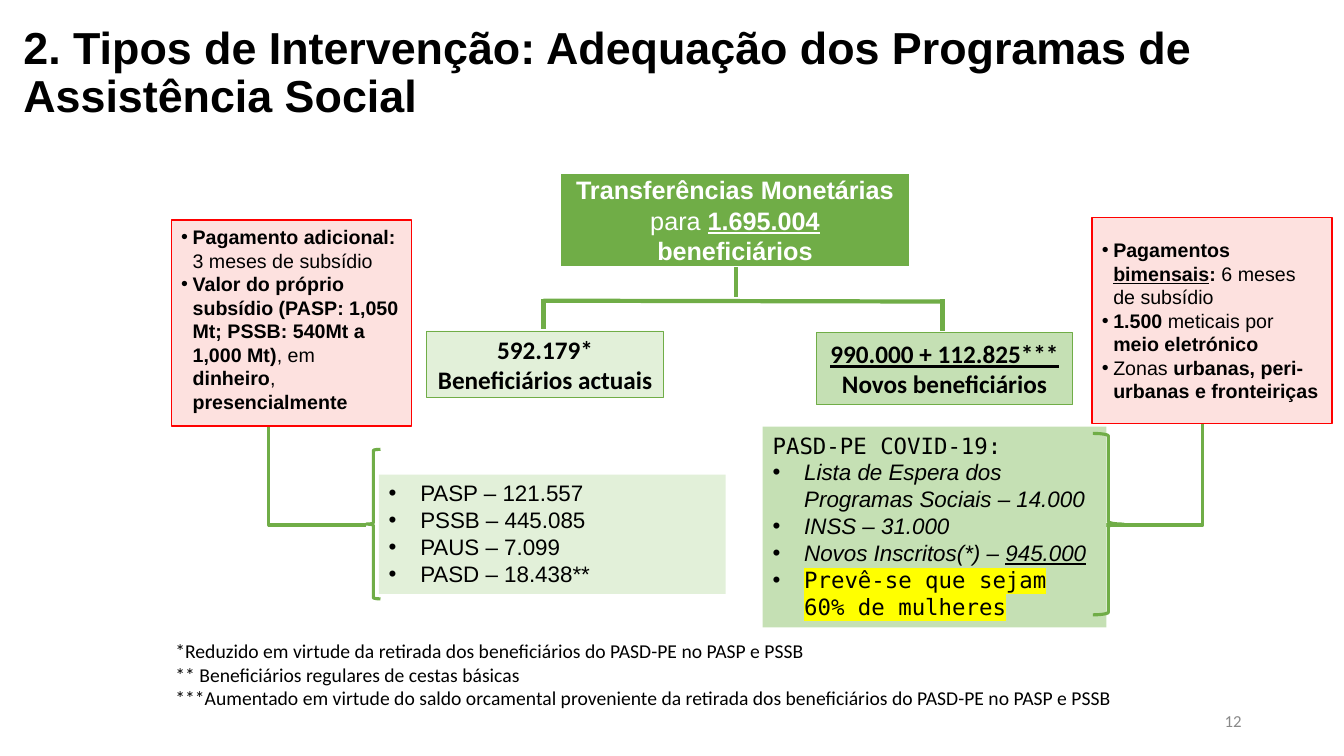
"""Build the slide on adapting the social assistance programmes, on a grid of 160 by 90 cells."""
from typing import NamedTuple, Optional

import lxml.etree
import pptx
import pptx.dml.color
import pptx.enum.shapes
import pptx.enum.text
import pptx.oxml.ns
import pptx.util

COLORS = {
    "green": "70AD47", "pale": "E2F0D9", "soft": "C5E0B4", "pink": "FDE1DF", "red": "FF0000",
    "white": "FFFFFF", "black": "000000", "gray": "898989", "yellow": "FFFF00",
}
SLIDE_WIDTH, SLIDE_HEIGHT = pptx.util.Inches(13.33), pptx.util.Inches(7.5)
COLUMN, ROW = SLIDE_WIDTH / 160, SLIDE_HEIGHT / 90
MONO = "DejaVu Sans Mono"
Shapes = pptx.enum.shapes.MSO_SHAPE
Links = pptx.enum.shapes.MSO_CONNECTOR
Anchor = pptx.enum.text.MSO_ANCHOR
Align = pptx.enum.text.PP_ALIGN


class Area(NamedTuple):
    column: float
    row: float
    columns: float
    rows: float

    def emu(self) -> list[int]:
        return [round(self.column * COLUMN), round(self.row * ROW),
                round(self.columns * COLUMN), round(self.rows * ROW)]


class Run(NamedTuple):
    text: str
    bold: bool = False
    italic: bool = False
    underline: bool = False
    font: Optional[str] = None
    highlight: Optional[str] = None


class Paragraph(NamedTuple):
    runs: list[Run]
    indent: float = 0


class Panel(NamedTuple):
    area: Area
    fill: str
    border: Optional[str]
    border_width: float
    paragraphs: list[Paragraph]
    style: dict


class Link(NamedTuple):
    start: tuple[float, float]
    end: tuple[float, float]
    kind: int = Links.STRAIGHT
    width: float = 3


class Brace(NamedTuple):
    area: Area
    mirrored: bool = False


def plain(*texts: str, indent: float = 0, **marks) -> list[Paragraph]:
    return [Paragraph([Run(text, **marks)], indent) for text in texts]


def rgb(name: str) -> pptx.dml.color.RGBColor:
    return pptx.dml.color.RGBColor.from_string(COLORS[name])


def child(parent, tag: str, **attributes: str):
    return lxml.etree.SubElement(parent, pptx.oxml.ns.qn(tag), attributes)


def write(frame, paragraphs: list[Paragraph], *, size: float, font: str = "Arial",
          color: str = "black", align=Align.LEFT, anchor=Anchor.TOP, spacing: float = 1) -> None:
    frame.word_wrap = True
    frame.vertical_anchor = anchor
    for index, content in enumerate(paragraphs):
        paragraph = frame.add_paragraph() if index else frame.paragraphs[0]
        if content.indent:
            properties = paragraph._p.get_or_add_pPr()
            margin = round(content.indent * COLUMN)
            properties.set("marL", str(margin))
            properties.set("indent", str(-margin))
            child(properties, "a:buFont", typeface="Arial")
            child(properties, "a:buChar", char="•")
        paragraph.alignment = align
        paragraph.line_spacing = spacing
        for part in content.runs:
            run = paragraph.add_run()
            run.text = part.text
            run.font.size = pptx.util.Pt(size)
            run.font.name = part.font or font
            run.font.bold = part.bold
            run.font.italic = part.italic
            run.font.underline = part.underline
            run.font.color.rgb = rgb(color)
            if part.highlight:
                properties = run._r.get_or_add_rPr()
                marker = child(properties, "a:highlight")
                child(marker, "a:srgbClr", val=COLORS[part.highlight])
                properties.find(pptx.oxml.ns.qn("a:solidFill")).addnext(marker)


def draw_text(slide, area: Area, paragraphs: list[Paragraph], **style) -> None:
    write(slide.shapes.add_textbox(*area.emu()).text_frame, paragraphs, **style)


def draw_panel(slide, panel: Panel) -> None:
    box = slide.shapes.add_shape(Shapes.RECTANGLE, *panel.area.emu())
    box.shadow.inherit = False
    box.fill.solid()
    box.fill.fore_color.rgb = rgb(panel.fill)
    if panel.border:
        box.line.color.rgb = rgb(panel.border)
        box.line.width = pptx.util.Pt(panel.border_width)
    else:
        box.line.fill.background()
    write(box.text_frame, panel.paragraphs, **panel.style)


def draw_link(slide, link: Link) -> None:
    (left, top), (right, bottom) = link.start, link.end
    connector = slide.shapes.add_connector(
        link.kind, round(left * COLUMN), round(top * ROW), round(right * COLUMN), round(bottom * ROW))
    connector.line.color.rgb = rgb("green")
    connector.line.width = pptx.util.Pt(link.width)
    properties = connector._element.spPr
    child(properties, "a:effectLst")
    if link.kind == Links.ELBOW:
        guides = properties.prstGeom.get_or_add_avLst()
        child(guides, "a:gd", name="adj1", fmla="val 100000")


def draw_brace(slide, brace: Brace) -> None:
    shape = slide.shapes.add_shape(Shapes.LEFT_BRACE, *brace.area.emu())
    shape.shadow.inherit = False
    shape.fill.background()
    shape.line.color.rgb = rgb("green")
    shape.line.width = pptx.util.Pt(2.25)
    if brace.mirrored:
        shape._element.spPr.get_or_add_xfrm().set("flipH", "1")


LIST_INDENT, NOTE_INDENT = 3.75, 1.35
CENTERED = {"align": Align.CENTER, "anchor": Anchor.MIDDLE, "size": 18}
ELBOWS = [
    Link((131.6, 62.5), (143.2, 43.4), Links.ELBOW, 2.25),
    Link((43.6, 62.5), (32, 43.4), Links.ELBOW, 2.25),
]
TREE = [
    Link((87.6, 31.8), (87.6, 35.4)),
    Link((64.7, 35.8), (112.2, 35.9)),
    Link((112.2, 35.6), (112.2, 39.4)),
    Link((64.7, 35.6), (64.7, 39.2)),
]
BRACES = [Brace(Area(43.6, 53.5, 1.7, 17.8)), Brace(Area(130.1, 51.6, 3.7, 21.6), mirrored=True)]
GROUPS = [
    Panel(Area(66.7, 20.6, 41.6, 11.2), "green", "white", 1.5, [Paragraph([
        Run("Transferências Monetárias ", bold=True), Run("para "),
        Run("1.695.004", bold=True, underline=True), Run(" beneficiários", bold=True),
    ])], {**CENTERED, "color": "white"}),
    Panel(Area(50.8, 39.4, 28.2, 7.9), "pale", "green", 0.5,
          plain("592.179* Beneficiários actuais", bold=True), {**CENTERED, "font": "Calibri"}),
    Panel(Area(97.2, 39.6, 30.5, 8.6), "soft", "green", 0.5,
          plain("990.000 + 112.825***", bold=True, underline=True)
          + plain("Novos beneficiários", bold=True), {**CENTERED, "font": "Calibri"}),
    Panel(Area(45.1, 56.5, 41.3, 14.2), "pale", None, 0,
          plain("PASP – 121.557", "PSSB – 445.085", "PAUS – 7.099", "PASD – 18.438**",
                indent=LIST_INDENT), {"size": 16}),
    Panel(Area(90.8, 50.8, 40.9, 23.9), "soft", None, 0,
          plain("PASD-PE COVID-19:", font=MONO)
          + plain("Lista de Espera dos Programas Sociais – 14.000", "INSS – 31.000",
                  indent=LIST_INDENT, italic=True)
          + [Paragraph([Run("Novos Inscritos(*) – ", italic=True),
                        Run("945.000", italic=True, underline=True)], LIST_INDENT)]
          + plain("Prevê-se que sejam 60% de mulheres", indent=LIST_INDENT, font=MONO,
                  highlight="yellow"), {"size": 16}),
]
NOTES = [
    Panel(Area(20.4, 26.2, 28.6, 24.5), "pink", "red", 1, [
        Paragraph([Run("Pagamento adicional: ", bold=True), Run("3 meses de subsídio")], NOTE_INDENT),
        Paragraph([Run("Valor do próprio subsídio (PASP: 1,050 Mt; PSSB: 540Mt a 1,000 Mt)", bold=True),
                   Run(", em"), Run(" dinheiro", bold=True), Run(", "),
                   Run("presencialmente", bold=True)], NOTE_INDENT),
    ], {"size": 14}),
    Panel(Area(130, 25.9, 28.6, 24.5), "pink", "red", 1, [
        Paragraph([Run("Pagamentos ", bold=True), Run("bimensais", bold=True, underline=True),
                   Run(":", bold=True), Run(" 6 meses de subsídio")], NOTE_INDENT),
        Paragraph([Run("1.500", bold=True), Run(" meticais por "),
                   Run("meio eletrónico", bold=True)], NOTE_INDENT),
        Paragraph([Run("Zonas "), Run("urbanas, peri-urbanas e fronteiriças", bold=True)], NOTE_INDENT),
    ], {"size": 14, "anchor": Anchor.MIDDLE}),
]


def main() -> None:
    deck = pptx.Presentation()
    deck.slide_width, deck.slide_height = SLIDE_WIDTH, SLIDE_HEIGHT
    slide = deck.slides.add_slide(deck.slide_layouts[6])
    draw_text(slide, Area(113, 83.4, 36, 4.8), plain("12"), size=12, font="Calibri",
              color="gray", align=Align.RIGHT, anchor=Anchor.MIDDLE)
    for draw, items in ((draw_link, ELBOWS), (draw_panel, GROUPS), (draw_link, TREE),
                        (draw_brace, BRACES), (draw_panel, NOTES)):
        for item in items:
            draw(slide, item)
    draw_text(slide, Area(19.7, 75.5, 127.4, 9.7), plain(
        "*Reduzido em virtude da retirada dos beneficiários do PASD-PE no PASP e PSSB",
        "** Beneficiários regulares de cestas básicas",
        "***Aumentado em virtude do saldo orcamental proveniente da retirada dos beneficiários"
        " do PASD-PE no PASP e PSSB"), size=14, font="Calibri")
    draw_text(slide, Area(1.6, 2.5, 155.6, 12.6), plain(
        "2. Tipos de Intervenção: Adequação dos Programas de Assistência Social", bold=True),
        size=32, anchor=Anchor.MIDDLE, spacing=0.9)
    deck.save("out.pptx")


if __name__ == "__main__":
    main()
